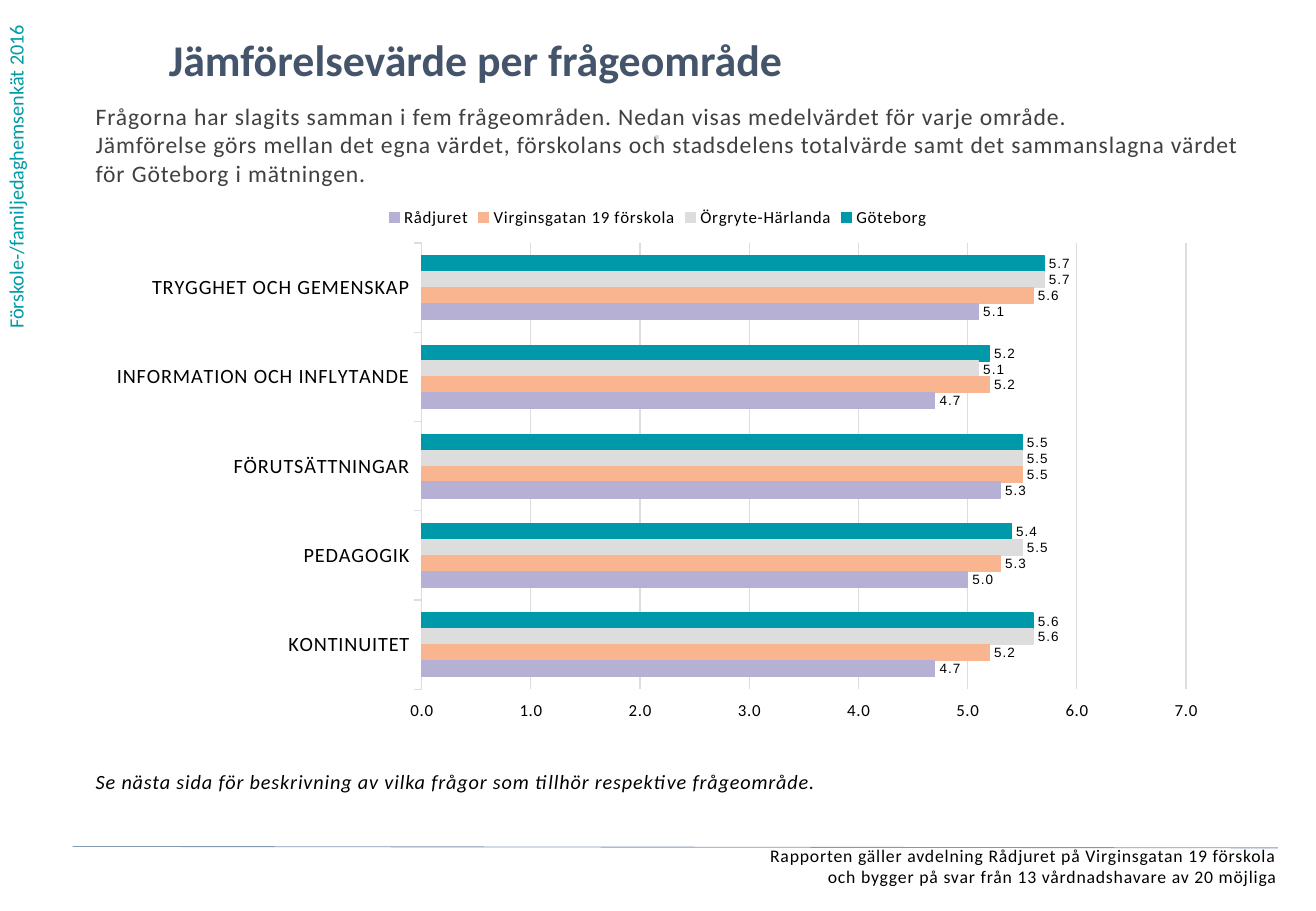
from lxml import etree
from pptx import Presentation
from pptx.chart.data import CategoryChartData
from pptx.dml.color import RGBColor
from pptx.enum.chart import (XL_CHART_TYPE, XL_LABEL_POSITION, XL_LEGEND_POSITION,
                             XL_TICK_LABEL_POSITION, XL_TICK_MARK)
from pptx.enum.shapes import MSO_CONNECTOR
from pptx.enum.text import PP_ALIGN
from pptx.oxml.ns import qn
from pptx.util import Cm, Pt

LEFT, CENTER, RIGHT = PP_ALIGN.LEFT, PP_ALIGN.CENTER, PP_ALIGN.RIGHT
BAR_CLUSTERED = XL_CHART_TYPE.BAR_CLUSTERED
LEGEND_TOP = XL_LEGEND_POSITION.TOP
LABEL_OUTSIDE = XL_LABEL_POSITION.OUTSIDE_END
TICK_OUTSIDE = XL_TICK_MARK.OUTSIDE
TICK_LABELS_HIGH = XL_TICK_LABEL_POSITION.HIGH
STRAIGHT = MSO_CONNECTOR.STRAIGHT


class Theme:
    font = "Calibri"
    label_font = "Arial"
    teal = RGBColor(0x00, 0x9B, 0xA4)
    heading = RGBColor(0x44, 0x54, 0x6A)
    body = RGBColor(0x40, 0x40, 0x40)
    black = RGBColor(0x00, 0x00, 0x00)
    dot = RGBColor(0xD2, 0xD9, 0xE2)
    rule = RGBColor(0x84, 0x97, 0xB0)
    grid = RGBColor(0xDD, 0xDD, 0xDD)
    series = [RGBColor(0x00, 0x99, 0xAA), grid,
              RGBColor(0xF9, 0xB5, 0x90), RGBColor(0xB6, 0xB1, 0xD4)]
    title_size, intro_size, text_size = Pt(26), Pt(14), Pt(12)
    footer_size, chart_size, label_size = Pt(10.5), Pt(10), Pt(8)
    hairline, chart_line = Pt(0.5), Pt(0.75)
    spacing = "50"


presentation = Presentation()
presentation.slide_width, presentation.slide_height = Cm(27.51), Cm(19.05)
slide = presentation.slides.add_slide(presentation.slide_layouts[6])


def add_text(box, text, size, color, align=LEFT, bold=False, italic=False,
             spaced=True, inset=0):
    """Add a one-paragraph text box; box is left, top, width, height in cm."""
    shape = slide.shapes.add_textbox(*[Cm(length) for length in box])
    frame = shape.text_frame
    frame.word_wrap = True
    frame.margin_left = frame.margin_right = Cm(2 * inset)
    frame.margin_top = frame.margin_bottom = Cm(inset)
    paragraph = frame.paragraphs[0]
    paragraph.text = text
    paragraph.alignment = align
    font = paragraph.font
    font.name, font.size, font.color.rgb = Theme.font, size, color
    font.bold, font.italic = bold, italic
    if spaced:
        paragraph._p.pPr.find(qn("a:defRPr")).set("spc", Theme.spacing)
    return shape


side_label = add_text((-0.19, -0.13, 1.02, 7.14), "Förskole-/familjedaghemsenkät 2016",
                      Theme.text_size, Theme.teal, spaced=False, inset=0.13)
side_label.text_frame._txBody.bodyPr.set("vert", "vert270")

add_text((3.53, 0.69, 21.18, 1.45), "Jämförelsevärde per frågeområde",
         Theme.title_size, Theme.heading, bold=True, spaced=False)
add_text((2, 2.13, 24.03, 2.57),
         "Frågorna har slagits samman i fem frågeområden. "
         "Nedan visas medelvärdet för varje område.\n"
         "Jämförelse görs mellan det egna värdet, förskolans och stadsdelens "
         "totalvärde samt det sammanslagna värdet för Göteborg i mätningen.",
         Theme.intro_size, Theme.body)
add_text((0.3, 17.66, 26.4, 1.08),
         "Rapporten gäller avdelning Rådjuret på Virginsgatan 19 förskola\n"
         "och bygger på svar från 13 vårdnadshavare av 20 möjliga",
         Theme.footer_size, Theme.black, align=RIGHT)
add_text((9.83, 2.59, 7.82, 0.99), "⋅", Theme.text_size, Theme.dot,
         align=CENTER, bold=True)
add_text((2, 16.08, 23.5, 0.8),
         "Se nästa sida för beskrivning av vilka frågor som tillhör "
         "respektive frågeområde.",
         Theme.text_size, Theme.black, italic=True)

# Chart
chart_data = CategoryChartData(number_format="0.0;0.0")
chart_data.categories = ["TRYGGHET OCH GEMENSKAP", "INFORMATION OCH INFLYTANDE",
                         "FÖRUTSÄTTNINGAR", "PEDAGOGIK", "KONTINUITET"]
chart_data.add_series("Göteborg", [5.7, 5.2, 5.5, 5.4, 5.6])
chart_data.add_series("Örgryte-Härlanda", [5.7, 5.1, 5.5, 5.5, 5.6])
chart_data.add_series("Virginsgatan 19 förskola", [5.6, 5.2, 5.5, 5.3, 5.2])
chart_data.add_series("Rådjuret", [5.1, 4.7, 5.3, 5.0, 4.7])
chart = slide.shapes.add_chart(BAR_CLUSTERED, Cm(2), Cm(4.07),
                               Cm(23.5), Cm(11.25), chart_data).chart
chart.has_title = False
chart.font.name, chart.font.size = Theme.font, Theme.chart_size
chart.font.color.rgb = Theme.black
chart.has_legend = True
chart.legend.position = LEGEND_TOP
chart.legend.include_in_layout = False
chart.legend.font.size = Theme.chart_size

category_axis, value_axis = chart.category_axis, chart.value_axis
category_axis.reverse_order = True
category_axis.major_tick_mark = value_axis.major_tick_mark = TICK_OUTSIDE
category_axis.tick_labels.font.size = Theme.text_size
value_axis.minimum_scale, value_axis.maximum_scale = 0, 7
value_axis.major_unit = 1
value_axis.tick_label_position = TICK_LABELS_HIGH
value_axis.tick_labels.number_format = "0.0;0.0"
value_axis.tick_labels.number_format_is_linked = False
value_axis.tick_labels.font.size = Theme.chart_size
value_axis.format.line.fill.background()
for line in (category_axis.format.line, value_axis.major_gridlines.format.line):
    line.color.rgb, line.width = Theme.grid, Theme.chart_line

plot = chart.plots[0]
plot.gap_width, plot.overlap = 162, 0
plot.vary_by_categories = False
for series, color in zip(plot.series, Theme.series):
    series.format.fill.solid()
    series.format.fill.fore_color.rgb = color
    series.format.line.color.rgb = color
    series.format.line.width = Theme.chart_line
    labels = series.data_labels
    labels.show_value = True
    labels.number_format, labels.number_format_is_linked = "0.0;0.0", False
    labels.position = LABEL_OUTSIDE
    labels.font.name, labels.font.size = Theme.label_font, Theme.label_size
    labels.font.color.rgb = Theme.black

for properties in chart._chartSpace.iter(qn("a:defRPr")):
    properties.set("spc", Theme.spacing)

plot_area = chart._chartSpace.chart.plotArea
for old_layout in plot_area.findall(qn("c:layout")):
    plot_area.remove(old_layout)
layout = etree.Element(qn("c:layout"))
manual_layout = etree.SubElement(layout, qn("c:manualLayout"))
for name, value in (("layoutTarget", "inner"), ("xMode", "edge"), ("yMode", "edge"),
                    ("x", "0.29"), ("y", "0.09"), ("w", "0.68"), ("h", "0.83")):
    etree.SubElement(manual_layout, qn(f"c:{name}")).set("val", value)
plot_area.insert(0, layout)

footer_rule = slide.shapes.add_connector(STRAIGHT, Cm(1.52), Cm(17.7),
                                         Cm(26.72), Cm(17.73))
footer_rule.line.color.rgb, footer_rule.line.width = Theme.rule, Theme.hairline
etree.SubElement(footer_rule._element.spPr, qn("a:effectLst"))

presentation.save("out.pptx")
